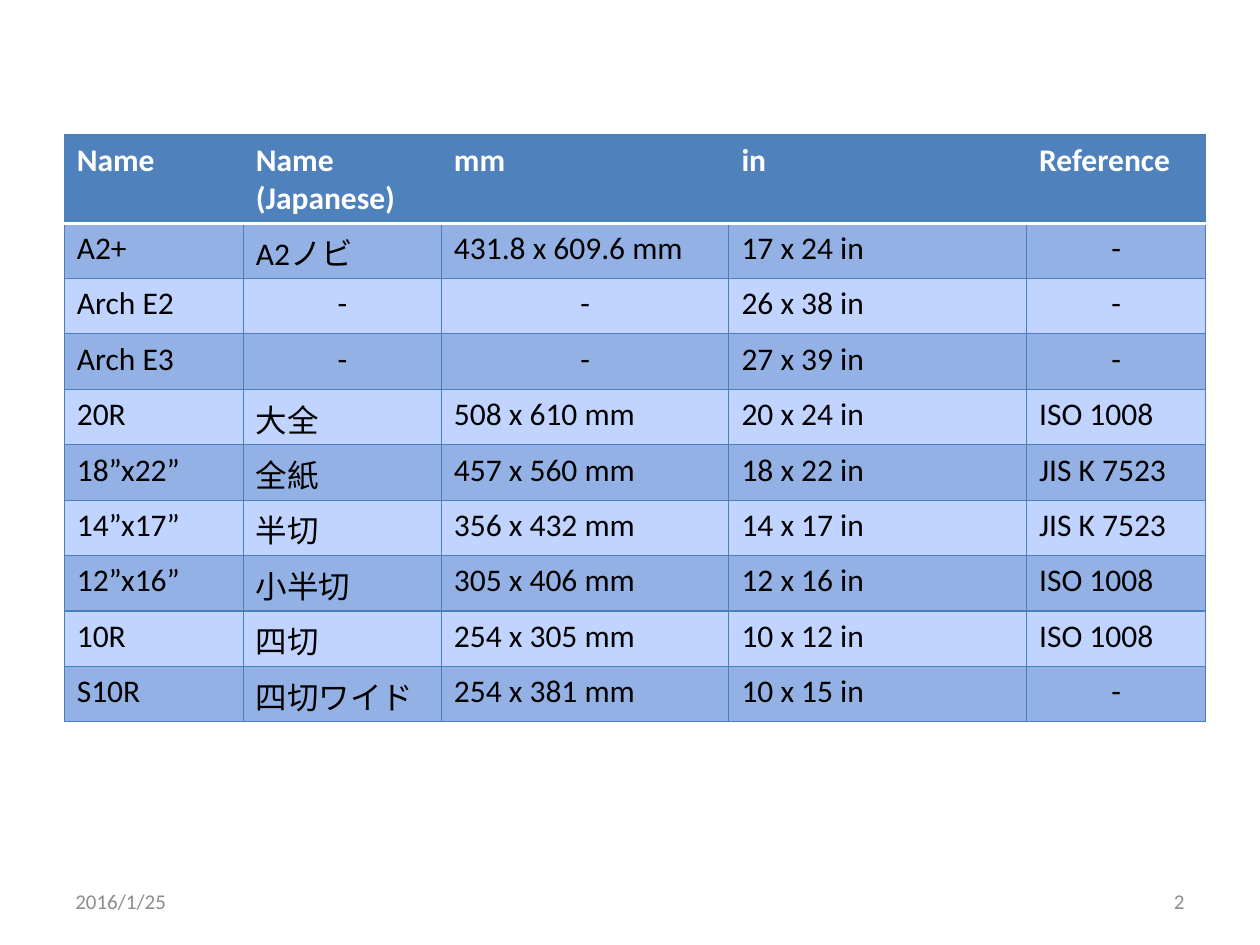
from dataclasses import dataclass

import pptx
import pptx.dml.color
import pptx.enum.text
import pptx.oxml.ns
import pptx.util
from lxml import etree

Inches = pptx.util.Inches
RGB = pptx.dml.color.RGBColor.from_string
ALIGN = pptx.enum.text.PP_ALIGN
ANCHOR = pptx.enum.text.MSO_ANCHOR


@dataclass(frozen=True)
class Theme:
    """Colours, type sizes and line widths of the slide."""
    font: str = "Calibri"
    table_size: int = 18
    footer_size: int = 12
    header: str = "4F81BD"
    dark_band: str = "93B1E4"
    light_band: str = "C0D4FF"
    border: str = "4B7EBC"
    white: str = "FFFFFF"
    black: str = "000000"
    footer: str = "8C8C8C"
    border_width: float = 0.75
    rule_width: float = 2


THEME = Theme()
COLUMN_WIDTHS = (1.42, 1.57, 2.28, 2.36, 1.42)
HEADER_HEIGHT = 0.7
ROW_HEIGHT = 0.44
PAPER_SIZES = (
    ("Name", "Name\n(Japanese)", "mm", "in", "Reference"),
    ("A2+", "A2ノビ", "431.8 x 609.6 mm", "17 x 24 in", "-"),
    ("Arch E2", "-", "-", "26 x 38 in", "-"),
    ("Arch E3", "-", "-", "27 x 39 in", "-"),
    ("20R", "大全", "508 x 610 mm", "20 x 24 in", "ISO 1008"),
    ("18”x22”", "全紙", "457 x 560 mm", "18 x 22 in", "JIS K 7523"),
    ("14”x17”", "半切", "356 x 432 mm", "14 x 17 in", "JIS K 7523"),
    ("12”x16”", "小半切", "305 x 406 mm", "12 x 16 in", "ISO 1008"),
    ("10R", "四切", "254 x 305 mm", "10 x 12 in", "ISO 1008"),
    ("S10R", "四切ワイド", "254 x 381 mm", "10 x 15 in", "-"),
)


def write_text(frame, text, *, size, color, bold=False, align=ALIGN.LEFT):
    """Write one formatted paragraph into a text frame."""
    paragraph = frame.paragraphs[0]
    paragraph.text = text.replace("\n", "\v")
    paragraph.alignment = align
    for run in paragraph.runs:
        run.font.name = THEME.font
        run.font.size = pptx.util.Pt(size)
        run.font.bold = bold
        run.font.color.rgb = RGB(color)


def draw_border(cell, side, color, width):
    """Draw one side (L, R, T or B) of a table cell."""
    qn = pptx.oxml.ns.qn
    properties = cell._tc.get_or_add_tcPr()
    line = etree.SubElement(properties, qn(f"a:ln{side}"), w=str(pptx.util.Pt(width)))
    fill = etree.SubElement(line, qn("a:solidFill"))
    etree.SubElement(fill, qn("a:srgbClr"), val=color)


def style_cell(cell, row):
    """Give a cell its borders and the fill of its row."""
    for side in "LRTB":
        is_rule = (row, side) in ((0, "B"), (1, "T"))
        draw_border(cell, side,
                    THEME.white if is_rule else THEME.border,
                    THEME.rule_width if is_rule else THEME.border_width)
    band = THEME.dark_band if row % 2 else THEME.light_band
    cell.fill.solid()
    cell.fill.fore_color.rgb = RGB(band if row else THEME.header)


def add_size_table(slide, left, top, width, height):
    """Place the table of paper sizes in the given box."""
    table = slide.shapes.add_table(len(PAPER_SIZES), len(COLUMN_WIDTHS),
                                   left, top, width, height).table
    for column, share in zip(table.columns, COLUMN_WIDTHS):
        column.width = int(width * share / sum(COLUMN_WIDTHS))
    for row, entries in enumerate(PAPER_SIZES):
        table.rows[row].height = Inches(ROW_HEIGHT if row else HEADER_HEIGHT)
        for column, entry in enumerate(entries):
            cell = table.cell(row, column)
            style_cell(cell, row)
            write_text(cell.text_frame, entry, size=THEME.table_size,
                       color=THEME.black if row else THEME.white, bold=row == 0,
                       align=ALIGN.CENTER if entry == "-" else ALIGN.LEFT)


def add_footer(slide, left, top, width, height):
    """Place the date and the page number at the ends of the given box."""
    item_width = Inches(2.33)
    for text, item_left, align in (("2016/1/25", left, ALIGN.LEFT),
                                   ("2", left + width - item_width, ALIGN.RIGHT)):
        frame = slide.shapes.add_textbox(item_left, top, item_width, height).text_frame
        frame.word_wrap = True
        frame.vertical_anchor = ANCHOR.MIDDLE
        write_text(frame, text, size=THEME.footer_size, color=THEME.footer, align=align)


def main():
    """Build the slide and save it."""
    presentation = pptx.Presentation()
    presentation.slide_width = Inches(10)
    presentation.slide_height = Inches(7.5)
    slide = presentation.slides.add_slide(presentation.slide_layouts[6])
    add_footer(slide, Inches(0.5), Inches(6.95), Inches(9), Inches(0.4))
    add_size_table(slide, Inches(0.51), Inches(1.07), Inches(9.06), Inches(4.63))
    presentation.save("out.pptx")


if __name__ == "__main__":
    main()
